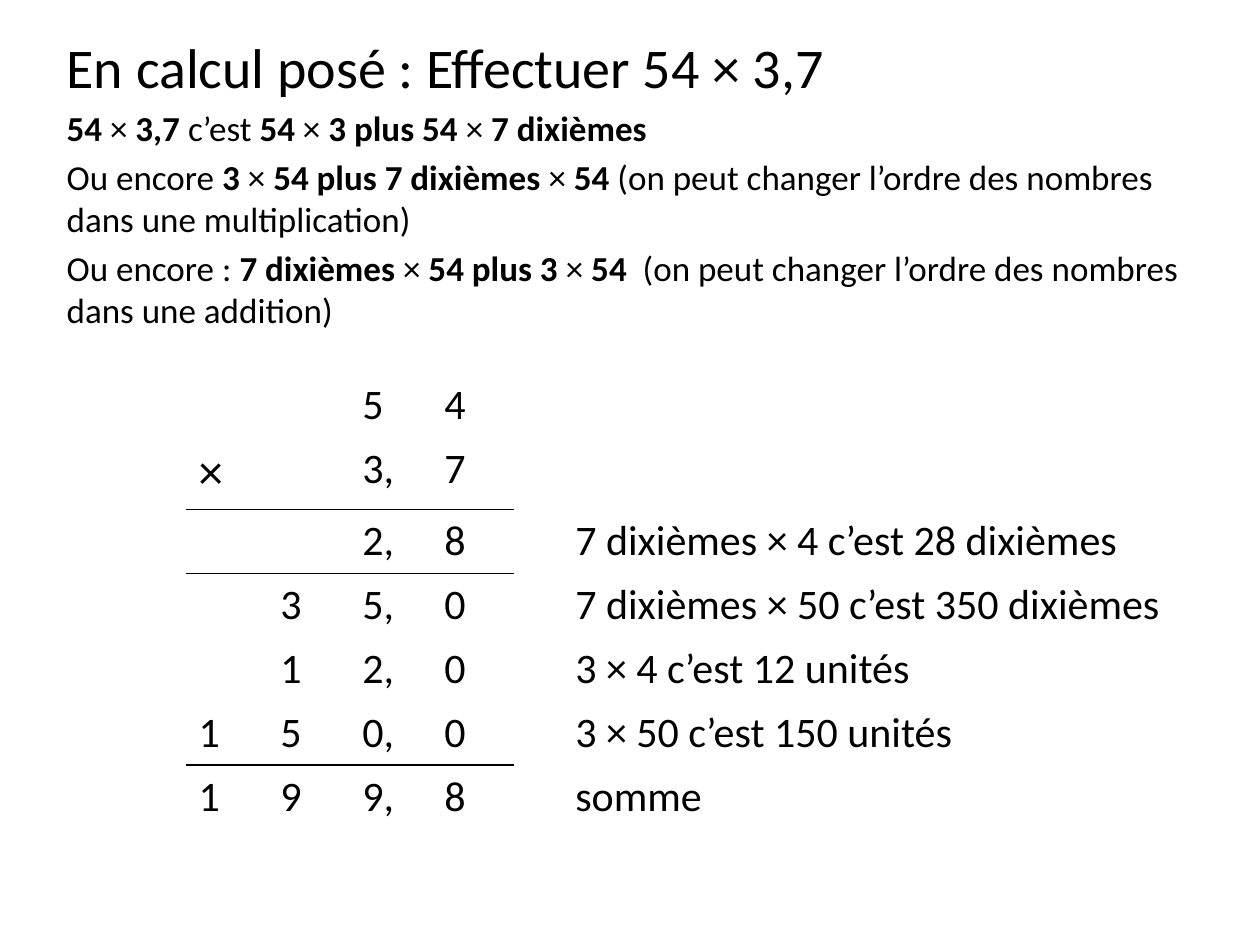
"""Build a slide that sets out the long multiplication 54 × 3,7."""
from lxml.etree import SubElement
from pptx import Presentation
from pptx.dml.color import RGBColor
from pptx.enum.text import MSO_AUTO_SIZE
from pptx.oxml import parse_xml
from pptx.oxml.ns import nsdecls, qn
from pptx.util import Pt

PX = 914400 // 126
THEME = {
    "font": "Calibri",
    "ink": "000000",
    "paper": "FFFFFF",
    "head": 32,
    "body": 20,
    "sum": 24,
    "sign": 28,
    "rule": 1,
}
PLAIN = "{2D5ABB26-0587-4C30-8999-92F81FD0307C}"


def add_run(para, text, size, bold=False):
    run = para.add_run()
    run.text = text
    font = run.font
    font.name, font.size, font.bold = THEME["font"], Pt(size), bold
    font.color.rgb = RGBColor.from_string(THEME["ink"])


def add_rule(cell, side):
    line = parse_xml(
        f'<a:{side} {nsdecls("a")} w="{Pt(THEME["rule"])}"><a:solidFill>'
        f'<a:srgbClr val="{THEME["ink"]}"/></a:solidFill></a:{side}>'
    )
    cell._tc.get_or_add_tcPr().insert(0, line)


deck = Presentation()
deck.slide_width, deck.slide_height = 1260 * PX, 945 * PX
slide = deck.slides.add_slide(deck.slide_layouts[1])
title = slide.shapes.title
title.element.getparent().remove(title.element)

body = slide.placeholders[1]
body.left, body.top, body.width, body.height = 54 * PX, 26 * PX, 1143 * PX, 863 * PX
frame = body.text_frame
frame.auto_size = MSO_AUTO_SIZE.NONE

# Odd pieces between bars are bold.
LINES = [
    ("head", "En calcul posé : Effectuer 54 × 3,7"),
    ("body", "|54 |×| 3,7 |c’est |54 |×| 3 plus 54 |×| 7 dixièmes"),
    ("body", "Ou encore |3 |×| 54 plus 7 dixièmes |×| 54 "
             "|(on peut changer l’ordre des nombres dans une multiplication)"),
    ("body", "Ou encore : |7 dixièmes |×| 54 plus 3 |×| 54  "
             "|(on peut changer l’ordre des nombres dans une addition)"),
]
for row, (kind, line) in enumerate(LINES):
    para = frame.add_paragraph() if row else frame.paragraphs[0]
    props = para._p.get_or_add_pPr()
    props.set("marL", "0")
    props.set("indent", "0")
    SubElement(props, qn("a:buNone"))
    for part, text in enumerate(line.split("|")):
        if text:
            add_run(para, text, THEME[kind], part % 2 == 1)

ROWS = [
    ["", "", "5", "4", ""],
    ["×", "", "3,", "7", ""],
    ["", "", "2,", "8", "7 dixièmes × 4 c’est 28 dixièmes"],
    ["", "3", "5,", "0", "7 dixièmes × 50 c’est 350 dixièmes"],
    ["", "1", "2,", "0", "3 × 4 c’est 12 unités"],
    ["1", "5", "0,", "0", "3 × 50 c’est 150 unités"],
    ["1", "9", "9,", "8", "somme"],
]
WIDTHS = [82] * 5 + [49, 633]
RULED = {1: "lnB", 2: "lnT", 5: "lnB", 6: "lnT"}

grid = slide.shapes.add_table(
    len(ROWS), len(WIDTHS), 104 * PX, 373 * PX, sum(WIDTHS) * PX, 52 * len(ROWS) * PX
).table
grid.first_row = grid.horz_banding = False
grid._tbl.tblPr.find(qn("a:tableStyleId")).text = PLAIN
for col, width in zip(grid.columns, WIDTHS):
    col.width = width * PX
for row, (*digits, note) in enumerate(ROWS):
    grid.rows[row].height = 52 * PX
    for col, text in enumerate(["", *digits, "", note]):
        cell = grid.cell(row, col)
        cell.fill.solid()
        cell.fill.fore_color.rgb = RGBColor.from_string(THEME["paper"])
        if text:
            size = THEME["sign" if text == "×" else "sum"]
            add_run(cell.text_frame.paragraphs[0], text, size)
        if row in RULED and 1 <= col <= 4:
            add_rule(cell, RULED[row])

deck.save("out.pptx")
